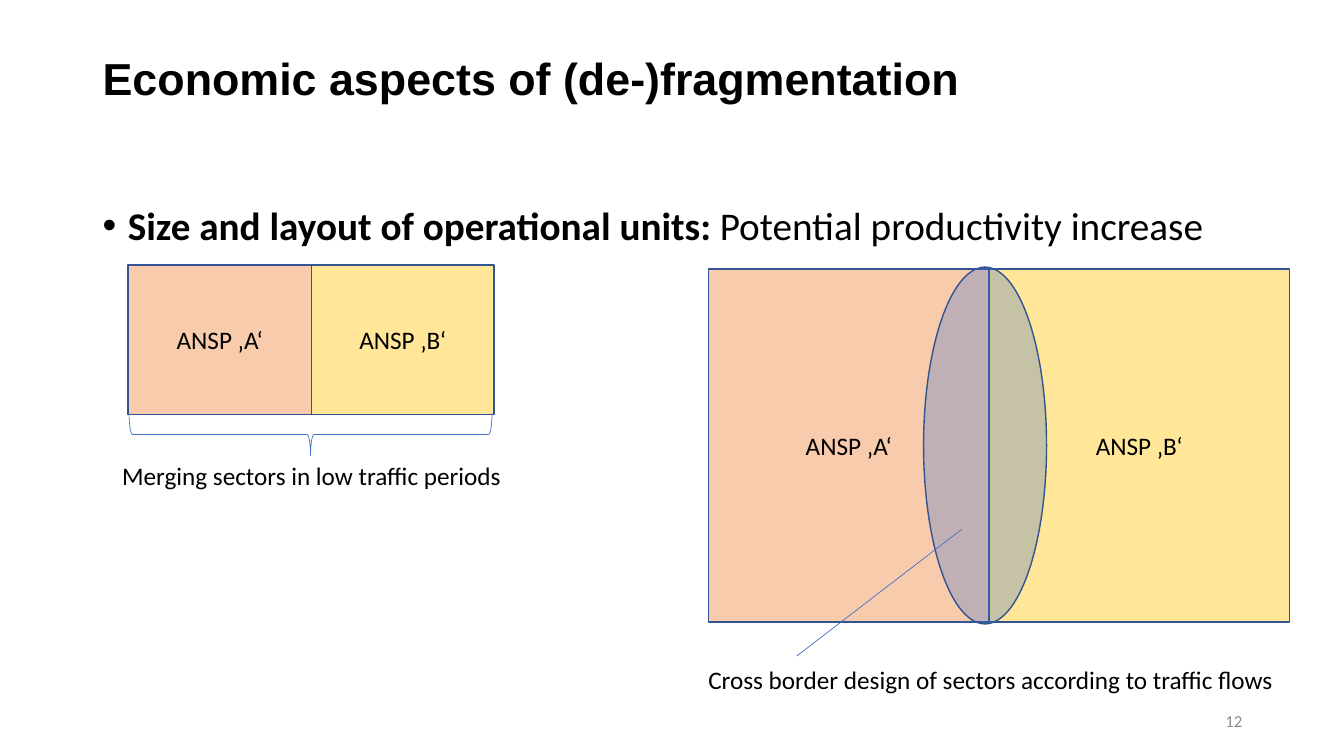
from lxml.etree import SubElement
from pptx import Presentation
from pptx.dml.color import RGBColor
from pptx.enum.shapes import MSO_CONNECTOR, MSO_SHAPE
from pptx.enum.text import MSO_ANCHOR, PP_ALIGN
from pptx.oxml.ns import qn
from pptx.util import Inches, Pt


def color(value):
    return RGBColor.from_string(value)


class SlideBuilder:
    """Holds the slide and its style, and adds styled elements."""

    font = "Calibri"
    black = "000000"
    outline = "325491"
    accent = "4472C4"
    peach = "F8CBAD"
    yellow = "FFE699"

    def __init__(self, presentation):
        self.slide = presentation.slides.add_slide(presentation.slide_layouts[6])

    def format_run(self, run, size=18, text_color=black, bold=False, font=font):
        run.font.name = font
        run.font.size = Pt(size)
        run.font.bold = bold
        run.font.color.rgb = color(text_color)

    def text(self, box, text, align=PP_ALIGN.LEFT, anchor=MSO_ANCHOR.TOP, **style):
        frame = self.slide.shapes.add_textbox(*map(Inches, box)).text_frame
        frame.word_wrap = True
        frame.vertical_anchor = anchor
        frame.text = text
        paragraph = frame.paragraphs[0]
        paragraph.alignment = align
        self.format_run(paragraph.runs[0], **style)
        return frame

    def title(self, box, text):
        frame = self.text(box, text, size=32, bold=True, font="Arial")
        frame.margin_top = Inches(0.16)
        frame.paragraphs[0].line_spacing = 0.9

    def bullet(self, box, heading, detail):
        paragraph = self.text(box, heading, size=28, bold=True).paragraphs[0]
        run = paragraph.add_run()
        run.text = detail
        self.format_run(run, size=28)
        paragraph.line_spacing = 0.9
        paragraph.space_before = Pt(10)
        properties = paragraph._p.get_or_add_pPr()
        properties.set("marL", str(Inches(0.25)))
        properties.set("indent", str(-Inches(0.25)))
        SubElement(properties, qn("a:buFont"), typeface="Arial")
        SubElement(properties, qn("a:buChar"), char="•")

    def shape(self, kind, box, fill=None, line=outline, width=1, alpha=None):
        shape = self.slide.shapes.add_shape(kind, *map(Inches, box))
        shape.shadow.inherit = False
        shape.line.color.rgb = color(line)
        shape.line.width = Pt(width)
        if fill is None:
            shape.fill.background()
        else:
            shape.fill.solid()
            shape.fill.fore_color.rgb = color(fill)
        if alpha is not None:
            fill_color = shape._element.spPr.find(qn("a:solidFill"))[0]
            SubElement(fill_color, qn("a:alpha"), val=str(alpha * 1000))
        return shape

    def sector(self, box, text, fill):
        frame = self.shape(MSO_SHAPE.RECTANGLE, box, fill).text_frame
        frame.vertical_anchor = MSO_ANCHOR.MIDDLE
        frame.text = text
        paragraph = frame.paragraphs[0]
        paragraph.alignment = PP_ALIGN.CENTER
        self.format_run(paragraph.runs[0])

    def sector_pair(self, left, top, width_a, width_b, height):
        self.sector((left, top, width_a, height), "ANSP ‚A‘", self.peach)
        self.sector((left + width_a, top, width_b, height), "ANSP ‚B‘", self.yellow)

    def brace(self, box):
        brace = self.shape(MSO_SHAPE.RIGHT_BRACE, box, line=self.accent, width=0.5)
        brace.rotation = 90

    def line(self, *ends):
        connector = self.slide.shapes.add_connector(
            MSO_CONNECTOR.STRAIGHT, *map(Inches, ends))
        connector.line.color.rgb = color(self.accent)
        connector.line.width = Pt(0.5)
        SubElement(connector._element.spPr, qn("a:effectLst"))


def main():
    presentation = Presentation()
    presentation.slide_width = Inches(13.33)
    presentation.slide_height = Inches(7.5)
    builder = SlideBuilder(presentation)

    builder.title((0.92, 0.4, 11.5, 1.45), "Economic aspects of (de-)fragmentation")
    builder.bullet((0.92, 2, 11.5, 4.76), "Size and layout of operational units: ",
                   "Potential productivity increase")

    builder.sector_pair(1.27, 2.63, 1.82, 1.81, 1.48)
    builder.brace((2.87, 2.51, 0.42, 3.6))
    builder.text((0.97, 4.52, 4.24, 0.4), "Merging sectors in low traffic periods",
                 PP_ALIGN.CENTER)

    builder.sector_pair(7.03, 2.67, 2.78, 2.98, 3.5)
    builder.shape(MSO_SHAPE.OVAL, (9.16, 2.65, 1.22, 3.54), builder.accent, alpha=31)
    builder.line(9.54, 5.25, 7.9, 6.51)
    builder.text((6.58, 6.54, 6.49, 0.4),
                 "Cross border design of sectors according to traffic flows",
                 PP_ALIGN.CENTER)
    builder.text((9.42, 6.95, 3, 0.4), "12", PP_ALIGN.RIGHT, MSO_ANCHOR.MIDDLE,
                 size=12, text_color="8C8C8C")

    presentation.save("out.pptx")


if __name__ == "__main__":
    main()
